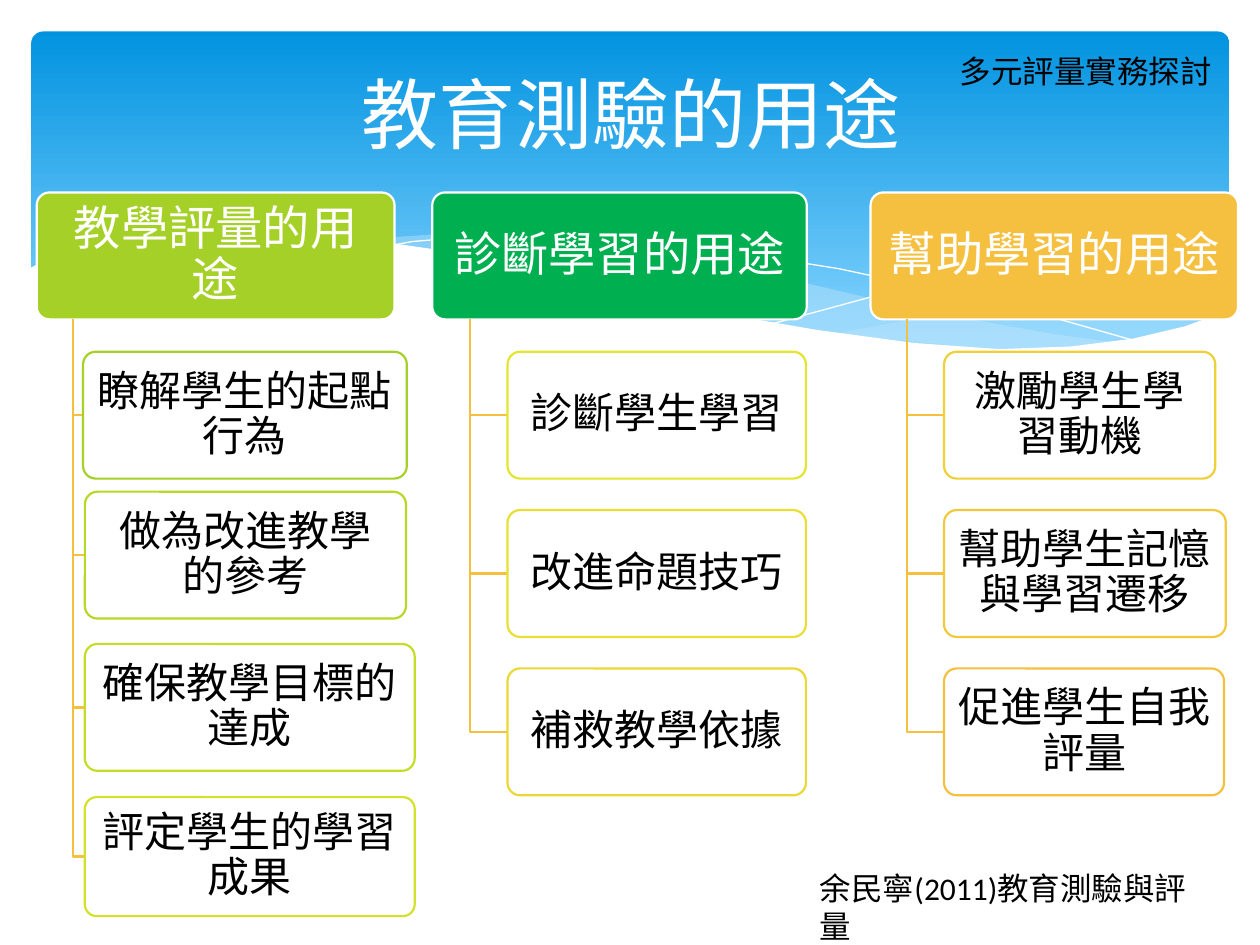
import pptx
import pptx.util
import pptx.dml.color
import pptx.enum.shapes
import pptx.enum.text
import pptx.oxml
import pptx.oxml.ns

Pt = pptx.util.Pt
PP_ALIGN = pptx.enum.text.PP_ALIGN
ANCHOR = pptx.enum.text.MSO_ANCHOR
ROUNDED = pptx.enum.shapes.MSO_SHAPE.ROUNDED_RECTANGLE
FONT = "Calibri"
GOLD = "F5C040"

# Backdrop outlines, in points
RIGHT_WAVE = [
    (702, 144), (682, 147), (652, 153), (620, 160.5), (580, 170.5), (542, 178.5),
    (508, 185), (476, 191), (508, 194), (536, 196.5), (562, 199.5), (586, 200),
    (608, 199.5), (628, 197.5), (646, 194.5), (663, 191), (678, 186.5),
    (693, 181.5), (702.5, 178), (702.5, 144)]
LONG_WAVE = [
    (643, 196.5), (602.5, 191), (558, 183), (508, 173), (453, 160), (420.5, 152),
    (389.5, 146), (361.5, 141), (335, 137.5), (302.5, 134.5), (273.5, 133),
    (247.5, 134), (225.5, 135.5), (206, 137.5), (246, 143.5), (291, 152),
    (323.5, 160), (381.5, 173), (432.5, 183.5), (479, 191.5), (520, 197.5),
    (556.5, 199.5), (589, 200), (617, 199.5)]
FALLING_LINE = [
    (222.5, 140.5), (236, 138), (261.5, 136), (288.5, 134.5), (324, 135.5),
    (367, 138), (419, 144), (479, 153.5), (547, 168), (598.5, 180.5), (653, 196)]
RISING_LINE = [
    (441.5, 185), (500.5, 169), (558.5, 155.5), (623.5, 143.5), (665.5, 137), (702, 133)]
WHITE_BODY = [
    (703.5, 177), (677, 186.5), (647.5, 193.5), (612, 198), (571, 199.5),
    (522.5, 196), (466.5, 188.5), (417, 180), (362, 168), (322, 158.5),
    (281.5, 149), (245, 142), (210, 137), (180, 134), (152, 132.5), (127.5, 132.5),
    (105, 133), (85.5, 134.5), (68.5, 137.5), (54.5, 140.5), (42.5, 143.5),
    (29, 147.5), (16.5, 153.5), (16.5, 237), (703.5, 237)]

# Each column: heading (text, colour, left, width), trunk x,
# and leaves (text, outline, left, top, width, height)
COLUMNS = [
    (("教學評量的用途", "A5D028", 21, 204.5), 41.8, [
        ("瞭解學生的起點行為", "A5D028", 47.5, 201, 185, 72.5),
        ("做為改進教學的參考", "B6D926", 48.5, 281, 183.5, 72.5),
        ("確保教學目標的達成", "C5DD28", 48.5, 368, 188.5, 72.5),
        ("評定學生的學習成果", "D4E12B", 48.5, 455.5, 188.5, 68)]),
    (("診斷學習的用途", "00B050", 247, 214), 268.5, [
        ("診斷學生學習", "E3E52E", 290, 201, 170.5, 72.5),
        ("改進命題技巧", "E8DF32", 290, 291.5, 170.5, 72.5),
        ("補救教學依據", "ECD835", 290, 382, 170.5, 72.5)]),
    (("幫助學習的用途", GOLD, 497.5, 210), 518.5, [
        ("激勵學生學習動機", "EFD038", 539.5, 201, 155, 72.5),
        ("幫助學生記憶與學習遷移", "F2C83C", 539.5, 291.5, 161, 72.5),
        ("促進學生自我評量", GOLD, 539.5, 382, 160, 72.5)]),
]
HEAD_TOP, HEAD_HEIGHT = 110, 72.5


def rgb(value):
    return pptx.dml.color.RGBColor.from_string(value)


def set_fill(shape, color, opacity=100):
    shape.fill.solid()
    shape.fill.fore_color.rgb = rgb(color)
    if opacity < 100:
        node = shape.fill._xPr.find(".//" + pptx.oxml.ns.qn("a:srgbClr"))
        alpha = pptx.oxml.parse_xml(
            f'<a:alpha {pptx.oxml.ns.nsdecls("a")} val="{opacity * 1000}"/>')
        node.append(alpha)


def set_line(shape, color, width):
    shape.line.color.rgb = rgb(color)
    shape.line.width = Pt(width)


def set_text(tf, text, size, color, align=PP_ALIGN.LEFT):
    tf.word_wrap = True
    p = tf.paragraphs[0]
    p.text = text
    p.alignment = align
    p.font.size = Pt(size)
    p.font.name = FONT
    p.font.color.rgb = rgb(color)
    return p


def add_outline(s, points, fill=None, opacity=100, line=None, width=0):
    """Closed when filled, open when only stroked."""
    (x, y), *rest = [(Pt(px), Pt(py)) for px, py in points]
    builder = s.shapes.build_freeform(x, y)
    builder.add_line_segments(rest, close=fill is not None)
    shape = builder.convert_to_shape()
    shape.shadow.inherit = False
    if fill:
        set_fill(shape, fill, opacity)
    else:
        shape.fill.background()
    if line:
        set_line(shape, line, width)
    else:
        shape.line.fill.background()


def add_rounded(s, box, radius):
    shape = s.shapes.add_shape(ROUNDED, *map(Pt, box))
    shape.adjustments[0] = radius
    shape.shadow.inherit = False
    return shape


def add_card(s, box, text, size, text_color, fill, line, opacity=100, inset=(5.8, 4.3)):
    card = add_rounded(s, box, 0.1)
    set_fill(card, fill, opacity)
    set_line(card, line, 1.25)
    tf = card.text_frame
    tf.vertical_anchor = ANCHOR.MIDDLE
    tf.margin_left = tf.margin_right = Pt(inset[0])
    tf.margin_top = tf.margin_bottom = Pt(inset[1])
    p = set_text(tf, text, size, text_color, PP_ALIGN.CENTER)
    p.line_spacing = 0.9


def add_backdrop(s, box):
    band = add_rounded(s, box, 0.034)
    band.line.fill.background()
    band.fill.gradient()
    band.fill.gradient_angle = 270
    for stop, (color, position) in zip(band.fill.gradient_stops,
                                       [("0293E0", 0), ("83D3FE", 0.9)]):
        stop.color.rgb = rgb(color)
        stop.position = position
    add_outline(s, RIGHT_WAVE, fill="C6E7FC", opacity=29)
    add_outline(s, LONG_WAVE, fill="C6E7FC", opacity=40)
    for points in (FALLING_LINE, RISING_LINE):
        add_outline(s, points, line="FFFFFF")
    add_outline(s, WHITE_BODY, fill="FFFFFF")


def add_title(s, box, text):
    title = s.shapes.title
    title.left, title.top, title.width, title.height = map(Pt, box)
    title.text_frame.vertical_anchor = ANCHOR.MIDDLE
    set_text(title.text_frame, text, 44, "FFFFFF", PP_ALIGN.CENTER)
    # Bring the title in front of the backdrop
    title.element.getparent().append(title.element)


def add_column(s, heading, trunk_x, leaves):
    text, color, left, width = heading
    add_card(s, (left, HEAD_TOP, width, HEAD_HEIGHT), text, 27, "FFFFFF",
             color, "FFFFFF", inset=(6.5, 5))
    for text, outline, left, top, width, height in leaves:
        middle = top + height / 2
        branch = [(trunk_x, HEAD_TOP + HEAD_HEIGHT), (trunk_x, middle), (left, middle)]
        add_outline(s, branch, line=GOLD, width=1.25)
        add_card(s, (left, top, width, height), text, 24, "000000",
                 "FFFFFF", outline, opacity=90)


def add_note(s, box, text):
    tf = s.shapes.add_textbox(*map(Pt, box)).text_frame
    set_text(tf, text, 18, "000000")


def main():
    prs = pptx.Presentation()
    prs.slide_width, prs.slide_height = Pt(720), Pt(540)
    s = prs.slides.add_slide(prs.slide_layouts[5])
    add_backdrop(s, (18, 18, 684.5, 194.5))
    add_title(s, (36.5, 15, 648, 98.5), "教育測驗的用途")
    add_note(s, (541.5, 26, 160, 29), "多元評量實務探討")
    for column in COLUMNS:
        add_column(s, *column)
    add_note(s, (461.5, 493, 240.5, 29), "余民寧(2011)教育測驗與評量")
    prs.save("out.pptx")


if __name__ == "__main__":
    main()
